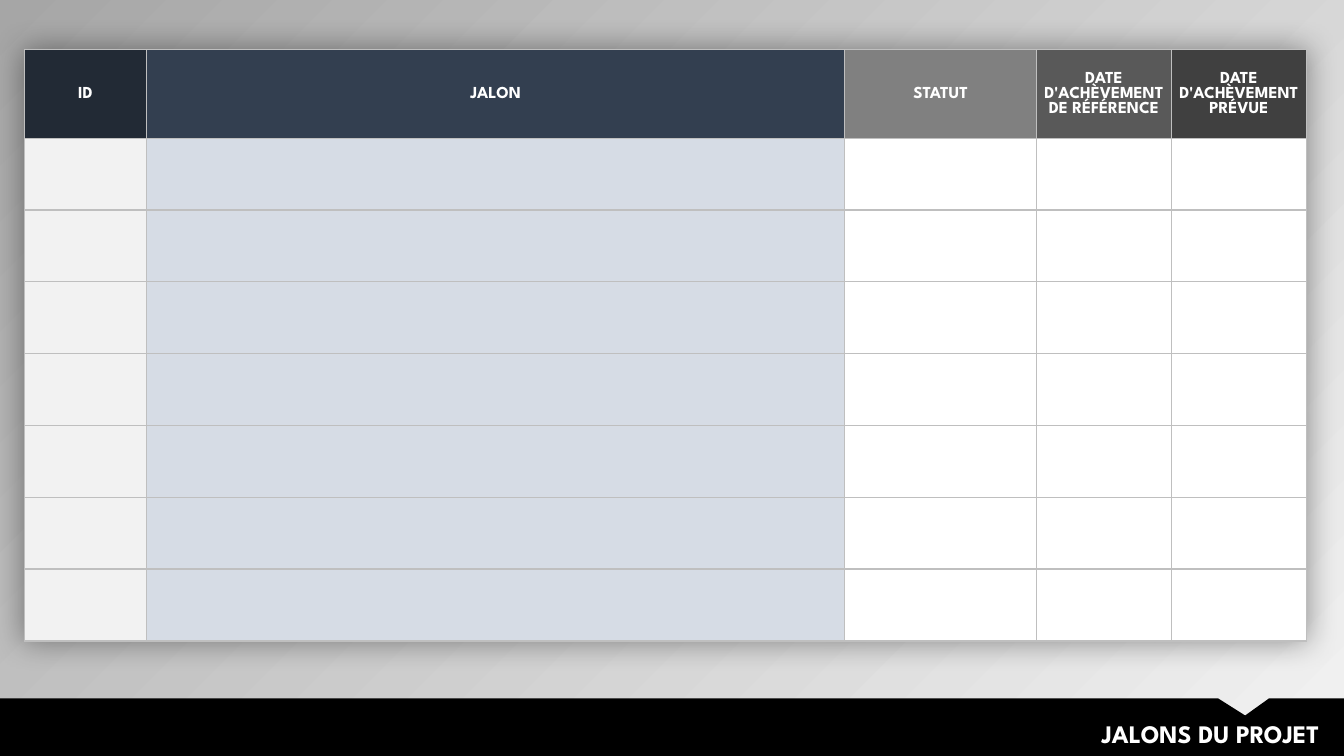
from lxml import etree
from pptx import Presentation
from pptx import util as u
from pptx.dml.color import RGBColor
from pptx.enum import text
from pptx.oxml import parse_xml
from pptx.oxml.ns import nsdecls, qn

Cm = u.Cm

TITLE = "JALONS DU PROJET"
# heading, width in cm, heading fill, body fill
COLUMNS = [
    ("ID", 3.07, "222A35", "F2F2F2"),
    ("JALON", 17.6, "333F50", "D6DCE5"),
    ("STATUT", 4.83, "808080", "FFFFFF"),
    ("DATE D'ACHÈVEMENT DE RÉFÉRENCE", 3.4, "595959", "FFFFFF"),
    ("DATE D'ACHÈVEMENT PRÉVUE", 3.4, "404040", "FFFFFF"),
]
BODY_ROWS = 7
HEADER_HEIGHT, ROW_HEIGHT = 2.23, 1.81
TABLE_LEFT, TABLE_TOP = 0.62, 1.25
SLIDE_WIDTH, SLIDE_HEIGHT = 33.87, 19.05
BAND_TOP = 17.6
NOTCH = [(30.7, BAND_TOP), (31.38, 18.03), (31.98, BAND_TOP)]

THEME = {
    "font": "League Spartan",
    "text": "FFFFFF",
    "band": "000000",
    "border": "BFBFBF",
    "gradient": ("F2F2F2", "A6A6A6"),
    "heading_size": 12,
    "title_size": 18,
}


def rgb(value):
    return RGBColor.from_string(value)


def write(frame, content, size, align, anchor):
    frame.word_wrap = True
    frame.vertical_anchor = anchor
    paragraph = frame.paragraphs[0]
    paragraph.alignment = align
    run = paragraph.add_run()
    run.text = content
    run.font.name = THEME["font"]
    run.font.size = u.Pt(size)
    run.font.bold = True
    run.font.color.rgb = rgb(THEME["text"])


def fill_cell(cell, color):
    """Give the cell four thin borders, then its fill."""
    properties = cell._tc.get_or_add_tcPr()
    for side in ("lnL", "lnR", "lnT", "lnB"):
        line = etree.SubElement(properties, qn(f"a:{side}"), w=str(u.Pt(1)))
        solid = etree.SubElement(line, qn("a:solidFill"))
        etree.SubElement(solid, qn("a:srgbClr"), val=THEME["border"])
    cell.fill.solid()
    cell.fill.fore_color.rgb = rgb(color)


def add_background(slide):
    fill = slide.background.fill
    fill.gradient()
    fill.gradient_angle = 135
    for stop, color in zip(fill.gradient_stops, THEME["gradient"]):
        stop.color.rgb = rgb(color)


def add_band(slide):
    corners = [(SLIDE_WIDTH, BAND_TOP), (SLIDE_WIDTH, SLIDE_HEIGHT), (0, SLIDE_HEIGHT)]
    builder = slide.shapes.build_freeform(0, Cm(BAND_TOP))
    builder.add_line_segments([(Cm(x), Cm(y)) for x, y in NOTCH + corners], close=True)
    shape = builder.convert_to_shape()
    shape.shadow.inherit = False
    shape.fill.solid()
    shape.fill.fore_color.rgb = rgb(THEME["band"])
    shape.line.fill.background()


def add_milestones(slide):
    width = sum(column[1] for column in COLUMNS)
    height = HEADER_HEIGHT + BODY_ROWS * ROW_HEIGHT
    table = slide.shapes.add_table(
        BODY_ROWS + 1, len(COLUMNS), Cm(TABLE_LEFT), Cm(TABLE_TOP), Cm(width), Cm(height)
    ).table
    table.horz_banding = False
    for index, row in enumerate(table.rows):
        row.height = Cm(ROW_HEIGHT if index else HEADER_HEIGHT)
    for index, (heading, column_width, heading_fill, body_fill) in enumerate(COLUMNS):
        table.columns[index].width = Cm(column_width)
        for row in range(BODY_ROWS + 1):
            fill_cell(table.cell(row, index), body_fill if row else heading_fill)
        cell = table.cell(0, index)
        cell.margin_left = cell.margin_right = cell.margin_top = Cm(0.03)
        cell.margin_bottom = 0
        write(cell.text_frame, heading, THEME["heading_size"],
              text.PP_ALIGN.CENTER, text.MSO_ANCHOR.MIDDLE)
        cell.vertical_anchor = text.MSO_ANCHOR.MIDDLE
    add_table_shadow(table)


def add_table_shadow(table):
    properties = table._tbl.tblPr
    properties.insert(0, parse_xml(
        f'<a:effectLst {nsdecls("a")}><a:outerShdw blurRad="{Cm(0.8)}" dist="0" algn="ctr" '
        'rotWithShape="0"><a:srgbClr val="000000"><a:alpha val="40000"/></a:srgbClr>'
        "</a:outerShdw></a:effectLst>"
    ))


def add_title(slide):
    frame = slide.shapes.add_textbox(Cm(16.28), Cm(17.98), Cm(17.22), Cm(1.02)).text_frame
    write(frame, TITLE, THEME["title_size"], text.PP_ALIGN.RIGHT, text.MSO_ANCHOR.TOP)
    frame.auto_size = text.MSO_AUTO_SIZE.SHAPE_TO_FIT_TEXT


def main():
    presentation = Presentation()
    presentation.slide_width, presentation.slide_height = Cm(SLIDE_WIDTH), Cm(SLIDE_HEIGHT)
    slide = presentation.slides.add_slide(presentation.slide_layouts[6])
    add_background(slide)
    add_band(slide)
    add_milestones(slide)
    add_title(slide)
    presentation.save("out.pptx")


if __name__ == "__main__":
    main()
